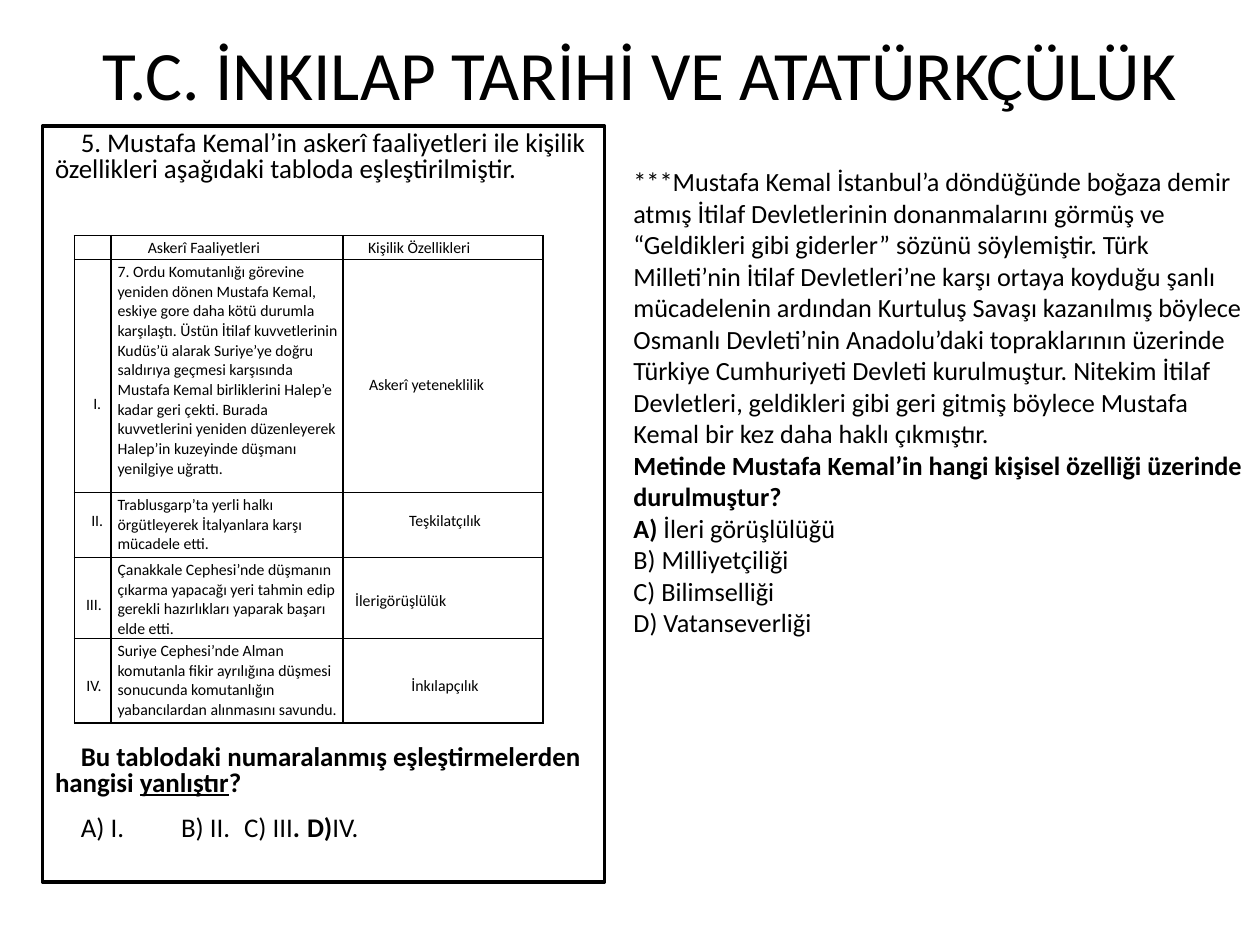
from dataclasses import dataclass

from lxml.etree import SubElement
from pptx import Presentation
from pptx.dml.color import RGBColor
from pptx.enum.shapes import MSO_SHAPE
from pptx.enum.text import MSO_ANCHOR, PP_ALIGN
from pptx.oxml.ns import qn
from pptx.util import Cm, Pt


@dataclass(frozen=True)
class Theme:
    font: str = "Calibri"
    ink: RGBColor = RGBColor(0, 0, 0)
    paper: RGBColor = RGBColor(255, 255, 255)
    title: float = 39.6
    question: float = 15.4
    passage: float = 15
    table: float = 9


@dataclass(frozen=True)
class Box:
    left: float
    top: float
    width: float
    height: float

    def lengths(self) -> tuple:
        return Cm(self.left), Cm(self.top), Cm(self.width), Cm(self.height)


@dataclass(frozen=True)
class Piece:
    text: str
    bold: bool = False
    underline: bool = False


@dataclass(frozen=True)
class Entry:
    text: str = ""
    left: float = 0.13
    top: float = 0.05
    align: PP_ALIGN = PP_ALIGN.LEFT
    line_spacing: float = 1.03


THEME = Theme()
TITLE_BOX = Box(1.73, 0.23, 22.33, 2.67)
QUESTION_BOX = Box(0.86, 2.54, 11.33, 15.24)
PASSAGE_BOX = Box(12.52, 2.57, 13.11, 13.08)
TABLE_BOX = Box(1.5, 4.75, 9.45, 9.82)
COLUMN_WIDTHS = (0.74, 4.67, 4.04)
ROW_HEIGHTS = (0.48, 4.7, 1.31, 1.63, 1.7)
TAB_STOPS = (2.54, 5.08, 6.83)
FIRST_LINE_INDENT = 0.52

QUESTION = (
    (0, (Piece("5. Mustafa Kemal’in askerî faaliyetleri ile kişilik özellikleri "
               "aşağıdaki tabloda eşleştirilmiştir."),)),
    (321, (Piece("Bu tablodaki numaralanmış eşleştirmelerden hangisi ", True),
           Piece("yanlıştır", True, True), Piece("?", True))),
    (11.3, (Piece("A) I.\tB) II.\tC) III"), Piece(".\tD)", True), Piece("IV."))),
)

PASSAGE = (
    (Piece("***Mustafa Kemal İstanbul’a döndüğünde boğaza demir atmış İtilaf Devletlerinin "
           "donanmalarını görmüş ve “Geldikleri gibi giderler” sözünü söylemiştir. Türk "
           "Milleti’nin İtilaf Devletleri’ne karşı ortaya koyduğu şanlı mücadelenin ardından "
           "Kurtuluş Savaşı kazanılmış böylece Osmanlı Devleti’nin Anadolu’daki topraklarının "
           "üzerinde Türkiye Cumhuriyeti Devleti kurulmuştur. Nitekim İtilaf Devletleri, "
           "geldikleri gibi geri gitmiş böylece Mustafa Kemal bir kez daha haklı çıkmıştır."),),
    (Piece("Metinde Mustafa Kemal’in hangi kişisel özelliği üzerinde durulmuştur?", True),),
    (Piece("A)", True), Piece(" İleri görüşlülüğü")),
    (Piece("B) Milliyetçiliği"),),
    (Piece("C) Bilimselliği"),),
    (Piece("D) Vatanseverliği"),),
)


def centred(text: str, left: float, top: float) -> Entry:
    """Describe a centred single-line table entry."""
    return Entry(text, left, top, PP_ALIGN.CENTER, 1)


ENTRIES = (
    (Entry(), Entry("Askerî Faaliyetleri", 0.74, line_spacing=1),
     Entry("Kişilik Özellikleri", 0.51)),
    (centred("I.", 0.18, 2.72),
     Entry("7. Ordu Komutanlığı görevine yeniden dönen Mustafa Kemal, eskiye gore daha kötü "
           "durumla karşılaştı. Üstün İtilaf kuvvetlerinin Kudüs’ü alarak Suriye’ye doğru "
           "saldırıya geçmesi karşısında Mustafa Kemal birliklerini Halep’e kadar geri çekti. "
           "Burada kuvvetlerini yeniden düzenleyerek Halep’in kuzeyinde düşmanı yenilgiye "
           "uğrattı."),
     Entry("Askerî yeteneklilik", 0.53, 2.34)),
    (centred("II.", 0.18, 0.39),
     Entry("Trablusgarp’ta yerli halkı örgütleyerek İtalyanlara karşı mücadele etti."),
     centred("Teşkilatçılık", 0.08, 0.39)),
    (centred("III.", 0.05, 0.77),
     Entry("Çanakkale Cephesi’nde düşmanın çıkarma yapacağı yeri tahmin edip gerekli "
           "hazırlıkları yaparak başarı elde etti."),
     Entry("İlerigörüşlülük", 0.25, 0.67)),
    (centred("IV.", 0.05, 0.77),
     Entry("Suriye Cephesi’nde Alman komutanla fikir ayrılığına düşmesi sonucunda "
           "komutanlığın yabancılardan alınmasını savundu."),
     centred("İnkılapçılık", 0.08, 0.77)),
)


def style_font(font, size: float) -> None:
    """Apply the theme typeface and colour at the given size."""
    font.name = THEME.font
    font.size = Pt(size)
    font.color.rgb = THEME.ink


def write_pieces(paragraph, pieces: tuple, size: float) -> None:
    """Write styled runs into a paragraph."""
    style_font(paragraph.font, size)
    for piece in pieces:
        run = paragraph.add_run()
        run.text = piece.text
        run.font.bold = piece.bold
        if piece.underline:
            run.font.underline = True


def paragraph_at(frame, index: int):
    """Return the first paragraph or append a new one."""
    return frame.add_paragraph() if index else frame.paragraphs[0]


def add_title(slide) -> None:
    """Add the centred heading."""
    frame = slide.shapes.add_textbox(*TITLE_BOX.lengths()).text_frame
    frame.word_wrap = True
    frame.vertical_anchor = MSO_ANCHOR.MIDDLE
    paragraph = frame.paragraphs[0]
    paragraph.alignment = PP_ALIGN.CENTER
    paragraph.line_spacing = 0.9
    write_pieces(paragraph, (Piece("T.C. İNKILAP TARİHİ VE ATATÜRKÇÜLÜK"),), THEME.title)


def add_question(slide) -> None:
    """Add the framed question with its answer choices."""
    shape = slide.shapes.add_shape(MSO_SHAPE.RECTANGLE, *QUESTION_BOX.lengths())
    shape.shadow.inherit = False
    shape.fill.solid()
    shape.fill.fore_color.rgb = THEME.paper
    shape.line.color.rgb = THEME.ink
    shape.line.width = Pt(2)
    frame = shape.text_frame
    frame.word_wrap = True
    frame.vertical_anchor = MSO_ANCHOR.TOP
    for index, (space_before, pieces) in enumerate(QUESTION):
        paragraph = paragraph_at(frame, index)
        properties = paragraph._p.get_or_add_pPr()
        properties.set("marL", "0")
        properties.set("indent", str(Cm(FIRST_LINE_INDENT)))
        tabs = SubElement(properties, qn("a:tabLst"))
        for stop in TAB_STOPS:
            SubElement(tabs, qn("a:tab"), pos=str(Cm(stop)), algn="l")
        paragraph.alignment = PP_ALIGN.LEFT
        paragraph.line_spacing = 0.8
        if space_before:
            paragraph.space_before = Pt(space_before)
        write_pieces(paragraph, pieces, THEME.question)


def add_passage(slide) -> None:
    """Add the reading passage with its question."""
    frame = slide.shapes.add_textbox(*PASSAGE_BOX.lengths()).text_frame
    frame.word_wrap = True
    frame.margin_top = Cm(0.77)
    for index, pieces in enumerate(PASSAGE):
        write_pieces(paragraph_at(frame, index), pieces, THEME.passage)


def fill_cell(cell, entry: Entry) -> None:
    """Write one table entry and draw its cell borders."""
    cell.margin_left, cell.margin_top = Cm(entry.left), Cm(entry.top)
    cell.margin_right = cell.margin_bottom = 0
    properties = cell._tc.get_or_add_tcPr()
    for side in ("lnL", "lnR", "lnT", "lnB"):
        border = SubElement(properties, qn(f"a:{side}"), w=str(Pt(1)))
        fill = SubElement(border, qn("a:solidFill"))
        SubElement(fill, qn("a:srgbClr"), val=str(THEME.ink))
    cell.fill.background()
    paragraph = cell.text_frame.paragraphs[0]
    paragraph.alignment = entry.align
    paragraph.line_spacing = entry.line_spacing
    if entry.text:
        write_pieces(paragraph, (Piece(entry.text),), THEME.table)
    else:
        SubElement(paragraph._p, qn("a:endParaRPr"), sz=str(int(THEME.table * 100)))


def add_matching_table(slide) -> None:
    """Add the table that pairs activities with traits."""
    table = slide.shapes.add_table(len(ROW_HEIGHTS), len(COLUMN_WIDTHS), *TABLE_BOX.lengths()).table
    table.first_row = table.horz_banding = False
    for column, width in zip(table.columns, COLUMN_WIDTHS):
        column.width = Cm(width)
    for row, height, entries in zip(table.rows, ROW_HEIGHTS, ENTRIES):
        row.height = Cm(height)
        for cell, entry in zip(row.cells, entries):
            fill_cell(cell, entry)


def main() -> None:
    """Build and save the slide."""
    presentation = Presentation()
    presentation.slide_width, presentation.slide_height = Cm(25.4), Cm(19.05)
    slide = presentation.slides.add_slide(presentation.slide_layouts[6])
    add_title(slide)
    add_question(slide)
    add_passage(slide)
    add_matching_table(slide)
    presentation.save("out.pptx")


if __name__ == "__main__":
    main()
